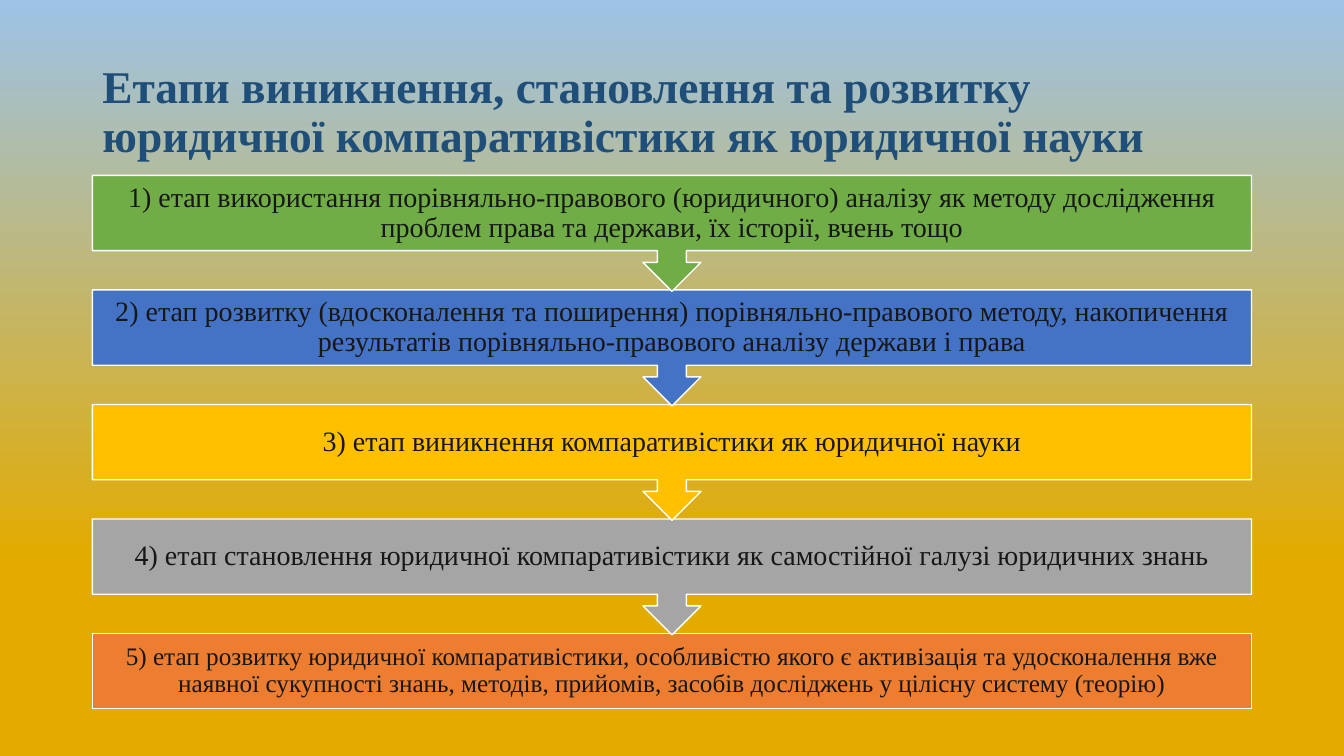
from dataclasses import dataclass

from pptx import Presentation
from pptx import util as u
from pptx.dml.color import RGBColor
from pptx.enum import shapes, text


@dataclass(frozen=True)
class Theme:
    font: str = "Times New Roman"
    title_size: float = 32.4
    stage_size: float = 20
    last_stage_size: float = 18
    title: str = "1F4E79"
    ink: str = "181717"
    outline: str = "FFFFFF"
    sky: str = "9DC3E6"
    gold: str = "E3AB00"
    stages: tuple = ("70AD47", "4472C4", "FFC000", "A5A5A5", "ED7D31")


TITLE = "Етапи виникнення, становлення та розвитку юридичної компаративістики як юридичної науки"
STAGES = (
    "1) етап використання порівняльно-правового (юридичного) аналізу як методу дослідження "
    "проблем права та держави, їх історії, вчень тощо",
    "2) етап розвитку (вдосконалення та поширення) порівняльно-правового методу, накопичення "
    "результатів порівняльно-правового аналізу держави і права",
    "3) етап виникнення компаративістики як юридичної науки",
    "4) етап становлення юридичної компаративістики як самостійної галузі юридичних знань",
    "5) етап розвитку юридичної компаративістики, особливістю якого є активізація та удосконалення "
    "вже наявної сукупності знань, методів, прийомів, засобів досліджень у цілісну систему (теорію)",
)
LEFT, WIDTH = 66, 828
STAGE_TOP, STAGE_PITCH = 125.3, 81.8
BOX_HEIGHT, CALLOUT_HEIGHT = 53.8, 82.8


class StageSlide:
    def __init__(self, deck, theme):
        self.theme = theme
        self.page = deck.slides.add_slide(deck.slide_layouts[5])

    def background(self):
        fill = self.page.background.fill
        fill.gradient()
        fill.gradient_angle = 90
        stops = ((0.26, self.theme.gold), (1, self.theme.sky))
        for stop, (position, color) in zip(fill.gradient_stops, stops):
            stop.position = position
            stop.color.rgb = RGBColor.from_string(color)

    def place(self, box, top, height):
        box.left, box.top = u.Pt(LEFT), u.Pt(top)
        box.width, box.height = u.Pt(WIDTH), u.Pt(height)

    def set_text(self, box, wording, size, color, align, bold=False):
        frame = box.text_frame
        frame.text = wording
        frame.word_wrap = True
        frame.auto_size = text.MSO_AUTO_SIZE.NONE
        frame.vertical_anchor = text.MSO_ANCHOR.MIDDLE
        para = frame.paragraphs[0]
        para.alignment = align
        para.line_spacing = 0.9
        for span in para.runs:
            span.font.name = self.theme.font
            span.font.size = u.Pt(size)
            span.font.bold = bold
            span.font.color.rgb = RGBColor.from_string(color)

    def title(self, wording):
        box = self.page.shapes.title
        self.place(box, 28.8, 104.4)
        self.set_text(box, wording, self.theme.title_size, self.theme.title,
                      text.PP_ALIGN.LEFT, bold=True)

    def stage(self, wording, top, color, last):
        kind = shapes.MSO_SHAPE.RECTANGLE if last else shapes.MSO_SHAPE.DOWN_ARROW_CALLOUT
        height = BOX_HEIGHT if last else CALLOUT_HEIGHT
        size = self.theme.last_stage_size if last else self.theme.stage_size
        box = self.page.shapes.add_shape(kind, u.Pt(LEFT), u.Pt(top), u.Pt(WIDTH), u.Pt(height))
        box.shadow.inherit = False
        box.fill.solid()
        box.fill.fore_color.rgb = RGBColor.from_string(color)
        box.line.color.rgb = RGBColor.from_string(self.theme.outline)
        box.line.width = u.Pt(1)
        frame = box.text_frame
        inset = u.Pt(10 if last else 11.2)
        frame.margin_left = frame.margin_right = inset
        frame.margin_top = frame.margin_bottom = inset
        self.set_text(box, wording, size, self.theme.ink, text.PP_ALIGN.CENTER)


def main():
    deck = Presentation()
    deck.slide_width, deck.slide_height = u.Pt(960), u.Pt(540)
    theme = Theme()
    slide = StageSlide(deck, theme)
    slide.background()
    slide.title(TITLE)
    for index in reversed(range(len(STAGES))):
        slide.stage(STAGES[index], STAGE_TOP + index * STAGE_PITCH,
                    theme.stages[index], last=index == len(STAGES) - 1)
    deck.save("out.pptx")


if __name__ == "__main__":
    main()
